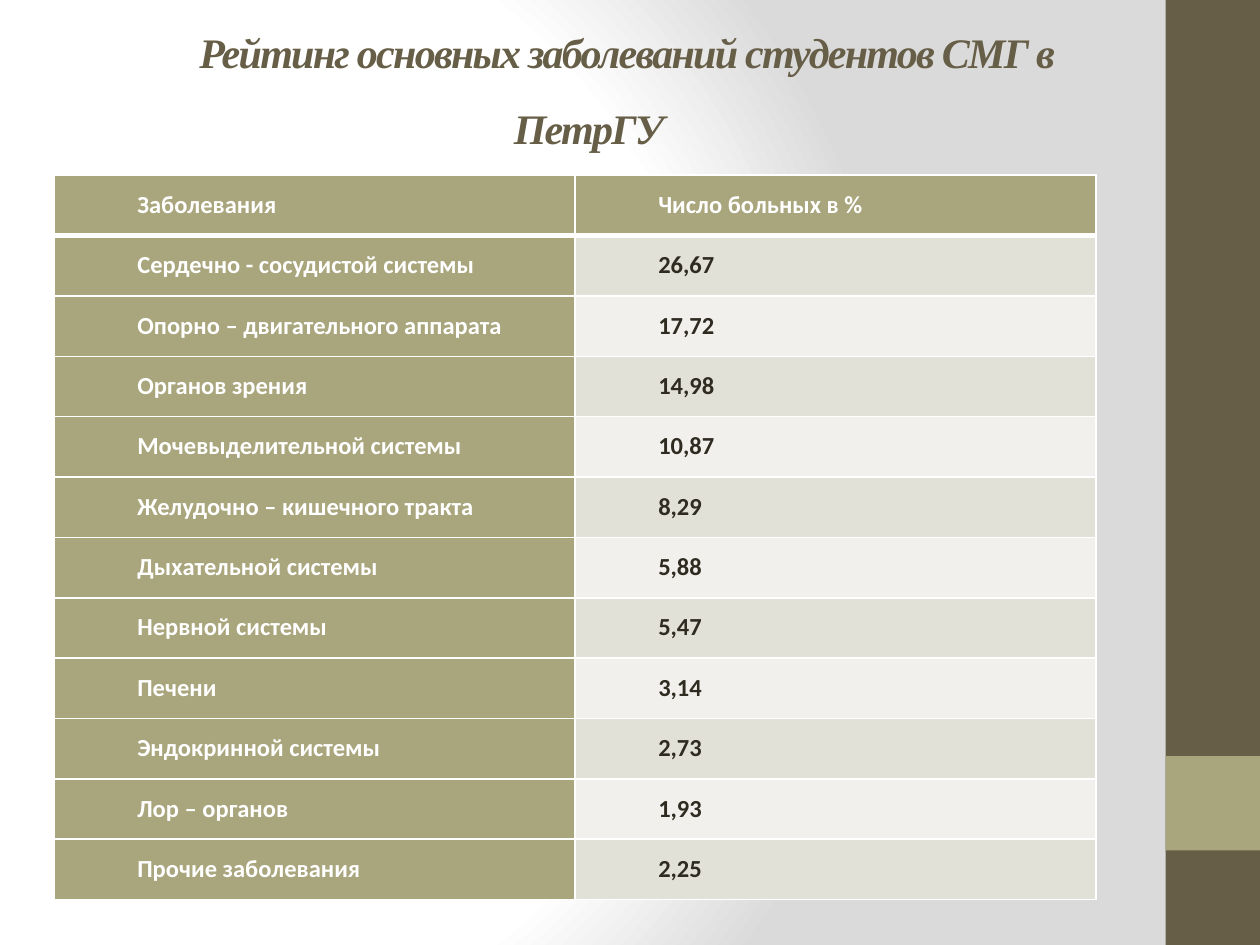
from lxml import etree
from pptx import Presentation
from pptx.dml.color import RGBColor
from pptx.enum import shapes, text
from pptx.oxml import parse_xml
from pptx.oxml.ns import qn
from pptx.util import Inches, Pt

WHITE = RGBColor(0xFF, 0xFF, 0xFF)
BROWN = RGBColor(0x67, 0x5E, 0x47)
OLIVE = RGBColor(0xA9, 0xA5, 0x7C)
DARK = RGBColor(0x2F, 0x2B, 0x20)
ODD_ROW = RGBColor(0xE2, 0xE1, 0xD7)
EVEN_ROW = RGBColor(0xF1, 0xF0, 0xEC)

RATING = [
    ("Заболевания", "Число больных в %"),
    ("Сердечно - сосудистой системы", "26,67"),
    ("Опорно – двигательного аппарата", "17,72"),
    ("Органов зрения", "14,98"),
    ("Мочевыделительной системы", "10,87"),
    ("Желудочно – кишечного тракта", "8,29"),
    ("Дыхательной системы", "5,88"),
    ("Нервной системы", "5,47"),
    ("Печени", "3,14"),
    ("Эндокринной системы", "2,73"),
    ("Лор – органов", "1,93"),
    ("Прочие заболевания", "2,25"),
]

BACKGROUND = """
<a:gradFill xmlns:a="http://schemas.openxmlformats.org/drawingml/2006/main" rotWithShape="1">
  <a:gsLst>
    <a:gs pos="0"><a:srgbClr val="FFFFFF"/></a:gs>
    <a:gs pos="75000"><a:srgbClr val="FFFFFF"/></a:gs>
    <a:gs pos="100000"><a:srgbClr val="DADADA"/></a:gs>
  </a:gsLst>
  <a:path path="circle"><a:fillToRect l="20000" t="50000" r="100000" b="50000"/></a:path>
</a:gradFill>"""


def write_line(frame, words, align, color, **font_values):
    """Put one paragraph with a first-line indent and 1.5 spacing in the frame."""
    paragraph = frame.paragraphs[0]
    paragraph.alignment = align
    paragraph.line_spacing = 1.5
    paragraph._p.get_or_add_pPr().set("indent", str(Inches(0.59)))
    run = paragraph.add_run()
    run.text = words
    run.font.color.rgb = color
    for name, value in font_values.items():
        setattr(run.font, name, value)
    return run


def add_borders(cell, widths):
    """Draw white borders; widths maps a side (L, R, T, B) to points."""
    properties = cell._tc.get_or_add_tcPr()
    for position, (side, width) in enumerate(widths.items()):
        border = etree.Element(qn(f"a:ln{side}"), w=str(Pt(width)))
        fill = etree.SubElement(border, qn("a:solidFill"))
        etree.SubElement(fill, qn("a:srgbClr"), val=str(WHITE))
        properties.insert(position, border)


prs = Presentation()
prs.slide_width, prs.slide_height = Inches(10), Inches(7.5)
slide = prs.slides.add_slide(prs.slide_layouts[6])

slide.background.fill.solid()
plain_fill = next(slide._element.iter(qn("a:solidFill")))
plain_fill.getparent().replace(plain_fill, parse_xml(BACKGROUND))

for top, height, color in [(0, 7.5, BROWN), (6, 0.75, OLIVE)]:
    band = slide.shapes.add_shape(shapes.MSO_SHAPE.RECTANGLE, Inches(9.25),
                                  Inches(top), Inches(0.75), Inches(height))
    band.shadow.inherit = False
    band.fill.solid()
    band.fill.fore_color.rgb = color
    band.line.fill.background()

title = slide.shapes.add_textbox(Inches(0.51), Inches(0), Inches(8.33), Inches(1.22))
title.text_frame.word_wrap = True
title.text_frame.vertical_anchor = text.MSO_ANCHOR.MIDDLE
heading = write_line(title.text_frame, "Рейтинг основных заболеваний студентов СМГ в ПетрГУ",
                     text.PP_ALIGN.CENTER, BROWN, size=Pt(24),
                     name="Times New Roman", bold=True, italic=True)
heading.font._element.set("spc", "-100")

table = slide.shapes.add_table(len(RATING), 2, Inches(0.43), Inches(1.39),
                               Inches(8.27), Inches(5.75)).table
CELL_FORMAT = {"margin_left": Inches(0.07), "margin_right": Inches(0.07),
               "margin_top": 0, "margin_bottom": 0}

for row, entry in enumerate(RATING):
    for column, words in enumerate(entry):
        cell = table.cell(row, column)
        for name, value in CELL_FORMAT.items():
            setattr(cell, name, value)
        is_header = row == 0 or column == 0
        cell.fill.solid()
        cell.fill.fore_color.rgb = OLIVE if is_header else ODD_ROW if row % 2 else EVEN_ROW
        write_line(cell.text_frame, words, text.PP_ALIGN.JUSTIFY,
                   WHITE if is_header else DARK,
                   size=Pt(14), name="Calibri", bold=True)
        add_borders(cell, {"L": 1, "R": 1, "T": 3 if row == 1 else 1,
                           "B": 3 if row == 0 else 1})

prs.save("out.pptx")
